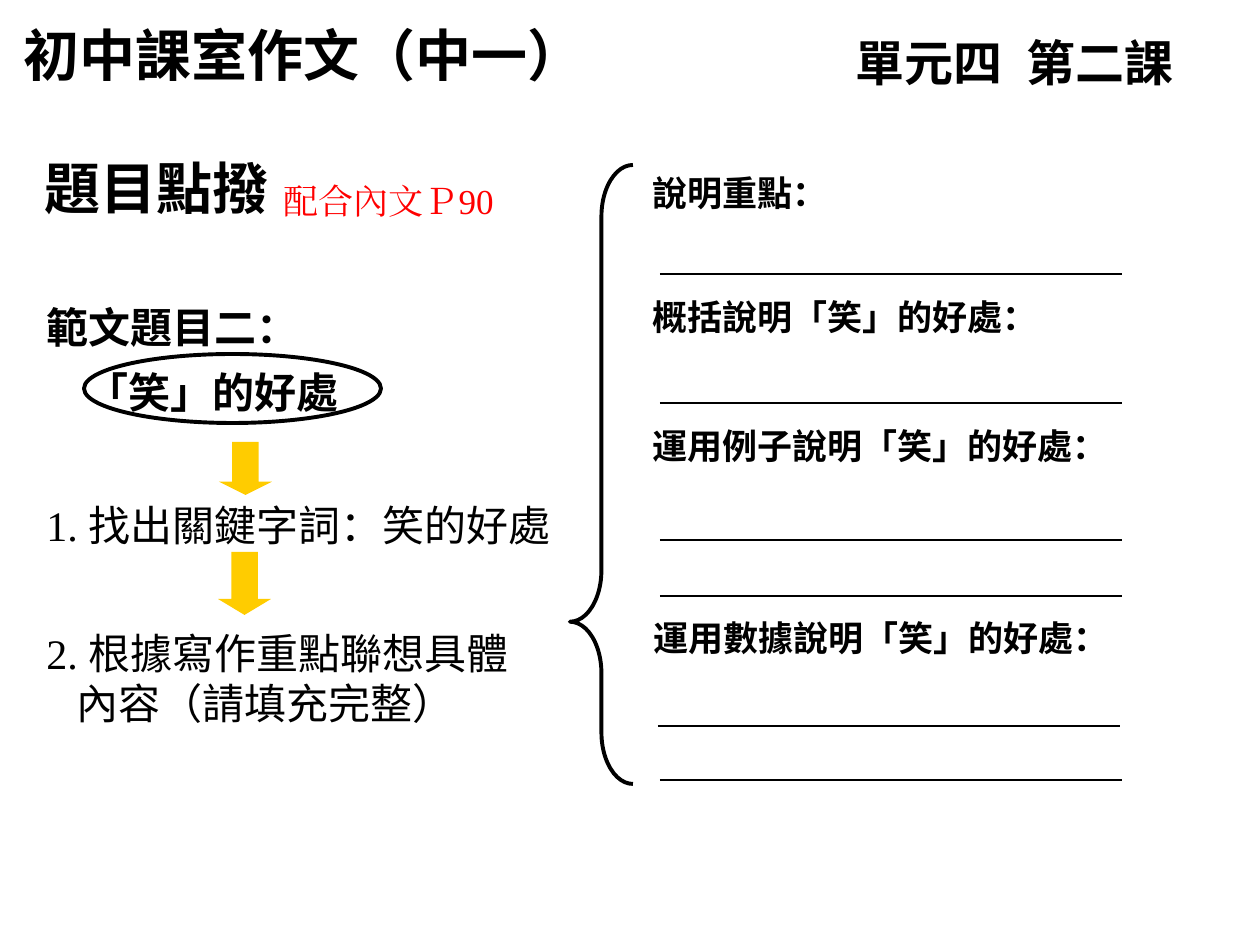
from pptx import Presentation
from pptx.dml.color import RGBColor
from pptx.enum.shapes import MSO_CONNECTOR, MSO_SHAPE as Shape
from pptx.enum.text import PP_ALIGN as Align
from pptx.oxml.ns import qn
from pptx.util import Pt

PX = 914400 // 126
BLACK = RGBColor(0, 0, 0)
RED = RGBColor(0xFF, 0, 0)
YELLOW = RGBColor(0xFF, 0xCC, 0)
TITLE, HEADING, BODY, SERIF = "Lato", "Arial", "DejaVu Sans", "Times New Roman"

presentation = Presentation()
presentation.slide_width = 1260 * PX
presentation.slide_height = 945 * PX
slide = presentation.slides.add_slide(presentation.slide_layouts[6])
shapes = slide.shapes


def add_run(paragraph, text, font, size, bold=False, color=BLACK):
    run = paragraph.add_run()
    run.text = text
    run.font.name = font
    run.font.size = Pt(size)
    run.font.bold = bold
    run.font.color.rgb = color
    properties = run.font._element
    east_asian = properties.makeelement(qn("a:ea"), {"typeface": font})
    properties.find(qn("a:latin")).addnext(east_asian)
    return run


def add_text_box(left, top, width, height):
    box = shapes.add_textbox(left * PX, top * PX, width * PX, height * PX)
    box.text_frame.word_wrap = True
    return box.text_frame


# Header
frame = add_text_box(11, 14, 658, 79)
add_run(frame.paragraphs[0], "初中課室作文（中一）", TITLE, 32, True)

paragraph = add_text_box(843, 26, 422, 72).paragraphs[0]
add_run(paragraph, "單元四", TITLE, 28, True)
gap = add_run(paragraph, " ", TITLE, 28, True)
gap.font._element.set("spc", "700")
add_run(paragraph, "第二課", TITLE, 28, True)

# Section heading and page reference
frame = add_text_box(32, 147, 388, 79)
add_run(frame.paragraphs[0], "題目點撥", HEADING, 32, True)
paragraph = add_text_box(233, 173, 311, 54).paragraphs[0]
paragraph.alignment = Align.CENTER
add_run(paragraph, "配合內文Ｐ90", SERIF, 20, color=RED)

# Essay topic, ringed
frame = add_text_box(34, 280, 630, 144)
topic = frame.paragraphs[0]
add_run(topic, "範文題目二：", BODY, 24, True)
topic_name = frame.add_paragraph()
topic_name._p.get_or_add_pPr().set("marL", str(40 * PX))
add_run(topic_name, "「笑」的好處", BODY, 24, True)
for paragraph in (topic, topic_name):
    paragraph.line_spacing = 1.3

ring = shapes.add_shape(Shape.OVAL, 84 * PX, 354 * PX, 297 * PX, 69 * PX)
ring.fill.background()

# Numbered steps
STEPS = [("1. ", "找出關鍵字詞：笑的好處", 493, 615, 63),
         ("2. ", "根據寫作重點聯想具體", 621, 525, 113)]
for number, text, top, width, height in STEPS:
    frame = add_text_box(34, top, width, height)
    add_run(frame.paragraphs[0], number, SERIF, 24)
    add_run(frame.paragraphs[0], text, BODY, 24)
continuation = frame.add_paragraph()
continuation._p.get_or_add_pPr().set("marL", str(30 * PX))
add_run(continuation, "內容（請填充完整）", BODY, 24)

# Arrows between the steps
ARROWS = [(Shape.DOWN_ARROW, 219, 442, 53, 53, 0.25, 0),
          (Shape.RIGHT_ARROW, 213, 557, 63, 53, 0.3, 90)]
for kind, left, top, width, height, head, rotation in ARROWS:
    arrow = shapes.add_shape(kind, left * PX, top * PX, width * PX, height * PX)
    arrow.adjustments[0] = 0.5
    arrow.adjustments[1] = head
    arrow.rotation = rotation
    arrow.shadow.inherit = False
    arrow.fill.solid()
    arrow.fill.fore_color.rgb = YELLOW
    arrow.line.fill.background()

# Brace around the writing points
brace = shapes.add_shape(Shape.LEFT_BRACE, 570 * PX, 165 * PX, 63 * PX, 619 * PX)
brace.adjustments[0] = 0.819
brace.adjustments[1] = 0.738
brace.fill.background()
for outline in (ring, brace):
    outline.shadow.inherit = False
    outline.line.color.rgb = BLACK
    outline.line.width = Pt(2.25)

# Writing points
POINTS = [("說明重點：", 640, 165, 273, 54),
          ("概括說明「笑」的好處：", 640, 289, 466, 54),
          ("運用例子說明「笑」的好處：", 640, 418, 466, 97),
          ("運用數據說明「笑」的好處：", 641, 610, 466, 97)]
for text, left, top, width, height in POINTS:
    frame = add_text_box(left, top, width, height)
    add_run(frame.paragraphs[0], text, BODY, 20, True)

# Answer lines
for left, y in [(660, 274), (660, 403), (660, 540), (660, 596), (658, 726), (660, 780)]:
    line = shapes.add_connector(MSO_CONNECTOR.STRAIGHT, left * PX, y * PX,
                                (left + 462) * PX, y * PX)
    line.line.color.rgb = BLACK
    line.line.width = Pt(0.75)
    properties = line._element.spPr
    properties.append(properties.makeelement(qn("a:effectLst"), {}))

presentation.save("out.pptx")
